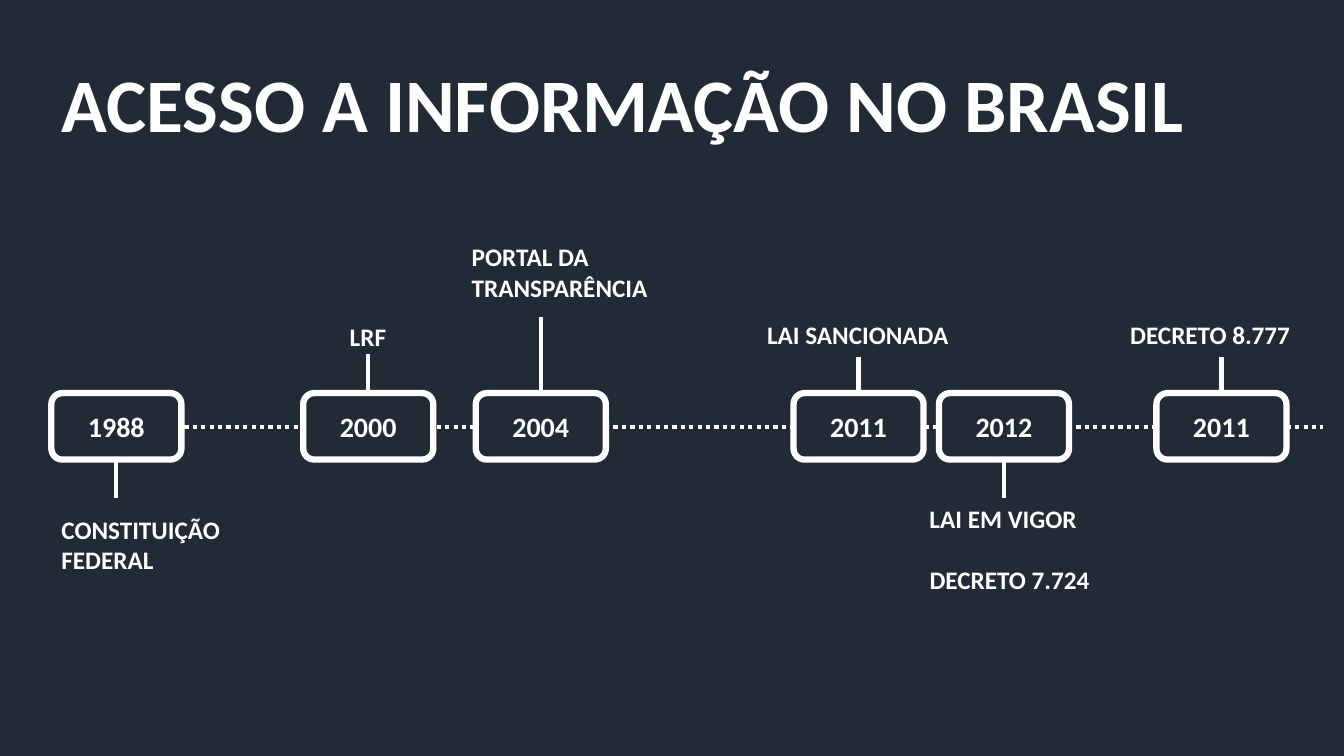
from pptx import Presentation
from pptx.dml.color import RGBColor
from pptx.enum.dml import MSO_LINE_DASH_STYLE as Dash
from pptx.enum.shapes import MSO_AUTO_SHAPE_TYPE as Shape, MSO_CONNECTOR_TYPE as Link
from pptx.enum.text import MSO_ANCHOR as Anchor, MSO_AUTO_SIZE as Fit, PP_ALIGN as Align
from pptx.oxml.ns import qn
from pptx.util import Inches, Pt
from lxml.etree import SubElement

# Content; every length is a percentage of the slide's width or height
TITLE = "ACESSO A INFORMAÇÃO NO BRASIL"
EVENTS = [  # year, centre, free end of the stem
    ("1988", 8.66, 65.87),
    ("2000", 27.4, 46.8),
    ("2004", 40.24, 41.87),
    ("2011", 63.88, 47.2),
    ("2012", 74.7, 65.87),
    ("2011", 90.88, 47.2),
]
LABELS = [  # paragraphs, left, top, width
    (["CONSTITUIÇÃO", "FEDERAL"], 3.83, 67.33, 13.8),
    (["LRF"], 25.28, 41.87, 4.28),
    (["PORTAL DA\nTRANSPARÊNCIA"], 34.36, 31.33, 14.7),
    (["LAI SANCIONADA"], 56.34, 41.6, 15.15),
    (["LAI EM VIGOR"], 68.42, 65.87, 12.6),
    (["DECRETO 7.724"], 68.42, 74, 13.5),
    (["DECRETO 8.777"], 83.35, 41.6, 13.5),
]
TITLE_AREA = (3.83, 6.8, 94.07, 15.07)
AXIS_START, AXIS_END, AXIS_ROW = 4.95, 98.42, 56.5
BOX_TOP, BOX_WIDTH, BOX_HEIGHT = 52, 9.68, 8.8
LABEL_HEIGHT, LABEL_LINE = 5.33, 4.13


class Theme:
    font = "Calibri"
    dark = RGBColor(0x22, 0x2A, 0x35)
    white = RGBColor(0xFF, 0xFF, 0xFF)
    title, year, label = Pt(54), Pt(20), Pt(18)
    border, rule = Pt(4.5), Pt(3)


deck = Presentation()
deck.slide_width, deck.slide_height = Inches(13.33), Inches(7.5)
page = deck.slides.add_slide(deck.slide_layouts[5])
page.background.fill.solid()
page.background.fill.fore_color.rgb = Theme.dark


def across(percent):
    return round(deck.slide_width * percent / 100)


def down(percent):
    return round(deck.slide_height * percent / 100)


def area(left, top, width, height):
    return across(left), down(top), across(width), down(height)


def write(box, paragraphs, size, align=Align.LEFT, anchor=Anchor.TOP,
          wrap=True, fit=Fit.NONE, spacing=None):
    frame = box.text_frame
    frame.word_wrap, frame.auto_size, frame.vertical_anchor = wrap, fit, anchor
    for index, text in enumerate(paragraphs):
        para = frame.add_paragraph() if index else frame.paragraphs[0]
        para.text, para.alignment, para.line_spacing = text, align, spacing
        for span in para.runs:
            span.font.name, span.font.size, span.font.bold = Theme.font, size, True
            span.font.color.rgb = Theme.white


def draw_line(start, end):
    line = page.shapes.add_connector(Link.STRAIGHT, *start, *end)
    line.line.color.rgb, line.line.width = Theme.white, Theme.rule
    SubElement(line._element.spPr, qn("a:effectLst"))
    return line


# Title
title = page.shapes.title
title.left, title.top, title.width, title.height = area(*TITLE_AREA)
write(title, [TITLE], Theme.title, anchor=Anchor.MIDDLE, spacing=0.9)

# Dotted time axis
axis = draw_line((across(AXIS_START), down(AXIS_ROW)), (across(AXIS_END), down(AXIS_ROW)))
axis.line.dash_style = Dash.ROUND_DOT

# Year boxes, each with a stem towards its label
for year, centre, stem_end in EVENTS:
    box = page.shapes.add_shape(
        Shape.ROUNDED_RECTANGLE,
        *area(centre - BOX_WIDTH / 2, BOX_TOP, BOX_WIDTH, BOX_HEIGHT))
    box.shadow.inherit = False
    box.fill.solid()
    box.fill.fore_color.rgb = Theme.dark
    box.line.color.rgb, box.line.width = Theme.white, Theme.border
    write(box, [year], Theme.year, align=Align.CENTER, anchor=Anchor.MIDDLE)

    tip = (across(centre), down(stem_end))
    stem = draw_line(tip, tip)
    stem.begin_connect(box, 0 if stem_end < BOX_TOP else 2)

# Event labels
for paragraphs, left, top, width in LABELS:
    extra_lines = len("\n".join(paragraphs).split("\n")) - 1
    height = LABEL_HEIGHT + extra_lines * LABEL_LINE
    label = page.shapes.add_textbox(*area(left, top, width, height))
    write(label, paragraphs, Theme.label, wrap=False, fit=Fit.SHAPE_TO_FIT_TEXT)

deck.save("out.pptx")
